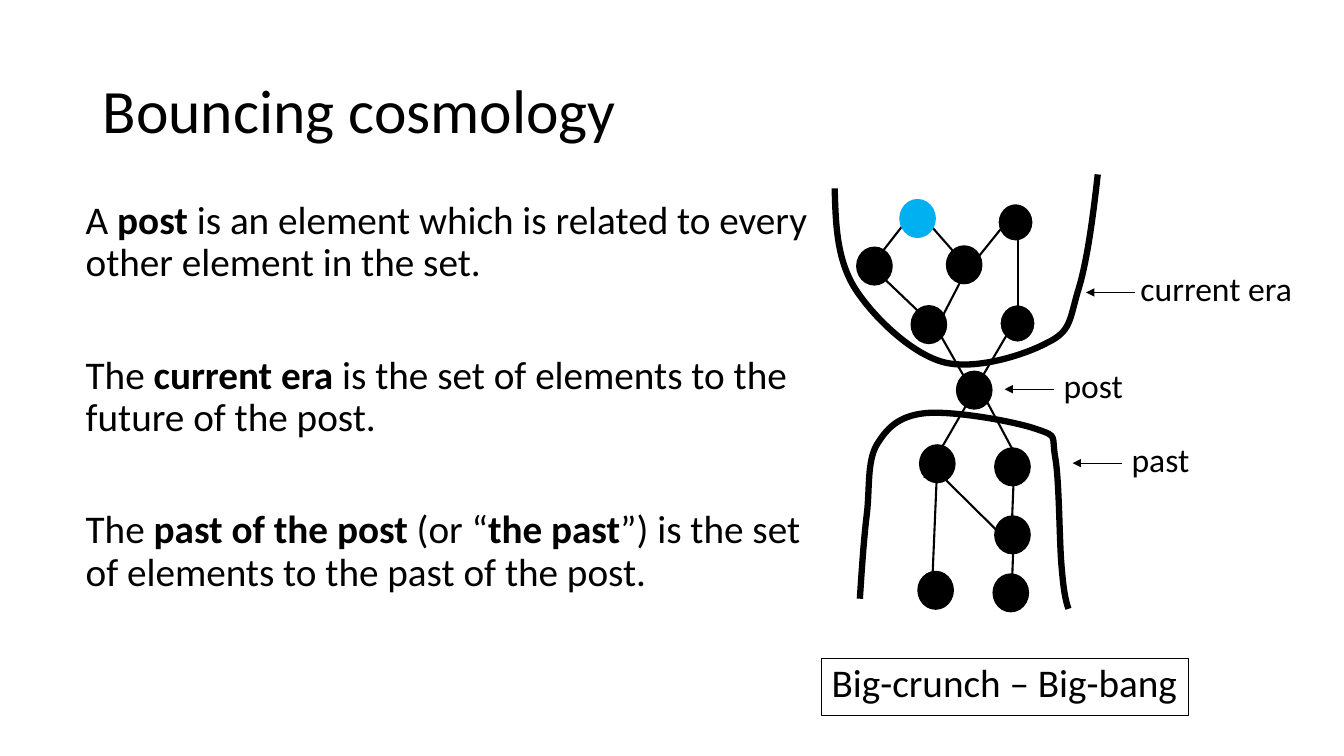
from pptx import Presentation
from pptx.dml.color import RGBColor
from pptx.enum.shapes import MSO_CONNECTOR, MSO_SHAPE
from pptx.enum.text import MSO_ANCHOR, MSO_AUTO_SIZE, PP_ALIGN
from pptx.oxml.ns import qn
from pptx.util import Pt
from lxml.etree import SubElement

BLACK = RGBColor(0x00, 0x00, 0x00)
WHITE = RGBColor(0xFF, 0xFF, 0xFF)
BLUE = RGBColor(0x00, 0xB0, 0xF0)
FONT = "Calibri"

presentation = Presentation()
presentation.slide_width, presentation.slide_height = Pt(960), Pt(540)
slide = presentation.slides.add_slide(presentation.slide_layouts[3])
title, definitions, caption = slide.placeholders


def add_line(x1, y1, x2, y2, width):
    line = slide.shapes.add_connector(
        MSO_CONNECTOR.STRAIGHT, Pt(x1), Pt(y1), Pt(x2), Pt(y2))
    line.line.color.rgb = BLACK
    line.line.width = Pt(width)
    SubElement(line.element.spPr, qn("a:effectLst"))
    return line


def add_node(left, top, fill, outline):
    node = slide.shapes.add_shape(
        MSO_SHAPE.OVAL, Pt(left), Pt(top), Pt(25.2), Pt(26.9))
    node.shadow.inherit = False
    node.fill.solid()
    node.fill.fore_color.rgb = fill
    node.line.color.rgb = outline
    node.line.width = Pt(1)


# Title, definitions and caption: (text, bold) runs per paragraph
texts = [
    (title, (66.2, 28.8, 828, 104.4), 44, [[("Bouncing cosmology", False)]]),
    (definitions, (54, 139.7, 532.8, 313.2), 28, [
        [("A ", False), ("post ", True),
         ("is an element which is related to every other element in the set.", False)],
        [("The", False), (" current era ", True),
         ("is the set of elements to the future of the post.", False)],
        [("The ", False), ("past of the post ", True), ("(or “", False),
         ("the past", True),
         ("”) is the set of elements to the past of the post.", False)],
    ]),
    (caption, (586.8, 470.4, 262.1, 40.6), 28, [[("Big-crunch – Big-bang", False)]]),
]
for shape, box, size, paragraphs in texts:
    shape.left, shape.top, shape.width, shape.height = map(Pt, box)
    frame = shape.text_frame
    frame.auto_size = MSO_AUTO_SIZE.NONE
    frame.vertical_anchor = MSO_ANCHOR.MIDDLE if shape is title else MSO_ANCHOR.TOP
    for index, runs in enumerate(paragraphs):
        paragraph = frame.add_paragraph() if index else frame.paragraphs[0]
        paragraph.alignment = PP_ALIGN.LEFT
        paragraph.line_spacing = 0.9
        paragraph.font.name = FONT
        paragraph.font.size = Pt(size)
        paragraph.font.color.rgb = BLACK
        if shape is not title:
            paragraph.space_before = Pt(50 if index else 10)
            properties = paragraph._p.get_or_add_pPr()
            properties.set("marL", "0")
            properties.set("indent", "0")
            properties.insert_element_before(
                properties.makeelement(qn("a:buNone")), "a:tabLst", "a:defRPr")
        for text, bold in runs:
            run = paragraph.add_run()
            run.text = text
            run.font.bold = bold
caption.line.color.rgb = BLACK
caption.line.width = Pt(0.75)

# Labels with arrows: text, left, top, width, arrow start
labels = [
    ("post", 752.6, 257, 57.6, 752.6),
    ("past", 801.2, 309.8, 56.2, 801.2),
    ("current era", 807.6, 187.9, 124.6, 810.7),
]
for text, left, top, width, arrow_start in labels:
    label = slide.shapes.add_textbox(Pt(left), Pt(top), Pt(width), Pt(36))
    label.text_frame.word_wrap = False
    paragraph = label.text_frame.paragraphs[0]
    paragraph.text = text
    paragraph.font.name = FONT
    paragraph.font.size = Pt(24)
    paragraph.font.color.rgb = BLACK
    arrow = add_line(arrow_start, top + 21, arrow_start - 35, top + 21, 0.5)
    SubElement(arrow.line._get_or_add_ln(), qn("a:tailEnd"), type="triangle")

# White-ringed elements lie beneath the relations
for left, top in [(712.8, 145.4), (714.2, 217.6)]:
    add_node(left, top, BLACK, WHITE)

# Relations between elements
relations = [
    (662.4, 158.4, 688.3, 187.9), (658.1, 144, 620.6, 192.2),
    (669.6, 329, 665.3, 430.6), (724.3, 378, 722.2, 434.9),
    (724.3, 337, 722.2, 388.8), (672.5, 339.8, 724.3, 391),
    (699.8, 277.2, 722.9, 320.4), (697.7, 276.5, 660.2, 341.3),
    (664.6, 226.8, 694.1, 278.6), (728.6, 223.2, 693.4, 283),
    (727.2, 146.9, 727.2, 234), (724.3, 151.9, 697, 185.8),
    (697, 180, 663.1, 245.5), (619.9, 187.9, 666.7, 232.6),
]
for relation in relations:
    add_line(*relation, 1.5)

# Elements of the causal set
elements = [
    (709.4, 410), (710.6, 368.6), (710.6, 320), (655.7, 408.2), (656.9, 317.8),
    (683.3, 265.2), (650.9, 218.4), (676.1, 175.7), (612, 176.6),
]
for left, top in elements:
    add_node(left, top, BLACK, BLACK)

# Boundaries of the past and the current era, as chained cubic Bézier points
past_boundary = [
    (614.2, 427.7), (615.6, 406.8), (617, 385.2), (619.2, 367.2),
    (621.4, 349.2), (619.2, 329.8), (626.4, 317.5),
    (633.6, 306), (641.5, 297.4), (660.2, 295.2),
    (679.7, 293), (725, 301), (740.9, 306.7),
    (756, 311.8), (751, 311), (753.8, 326.9),
    (756.7, 343.4), (756.7, 385.2), (758.2, 403.2),
    (759.6, 421.2), (761, 428.4), (763.2, 434.9),
]
era_boundary = [
    (596.2, 134.6), (596.9, 159.8), (597.6, 185), (610.6, 205.9),
    (623.5, 226.1), (650.2, 252), (673.2, 258.5),
    (696.2, 265), (732.2, 253.4), (748.1, 244.8),
    (764.6, 236.9), (763.9, 229), (769.7, 208.8),
    (776.2, 188.6), (780.5, 157), (784.1, 124.6),
]
for controls in (past_boundary, era_boundary):
    anchors = [(Pt(x), Pt(y)) for x, y in controls[::3]]
    builder = slide.shapes.build_freeform(*anchors[0])
    builder.add_line_segments(anchors[1:], close=False)
    boundary = builder.convert_to_shape()
    boundary.shadow.inherit = False
    boundary.fill.background()
    boundary.line.color.rgb = BLACK
    boundary.line.width = Pt(4.5)
    # Bend each straight segment with its two control points
    for index, segment in enumerate(list(boundary.element.iter(qn("a:lnTo")))):
        segment.tag = qn("a:cubicBezTo")
        for position in (0, 1):
            x, y = controls[3 * index + 1 + position]
            point = segment.makeelement(qn("a:pt"), {
                "x": str(Pt(x) - boundary.left), "y": str(Pt(y) - boundary.top)})
            segment.insert(position, point)

# Highlighted element
add_node(642.8, 142.6, BLUE, BLUE)

presentation.save("out.pptx")
